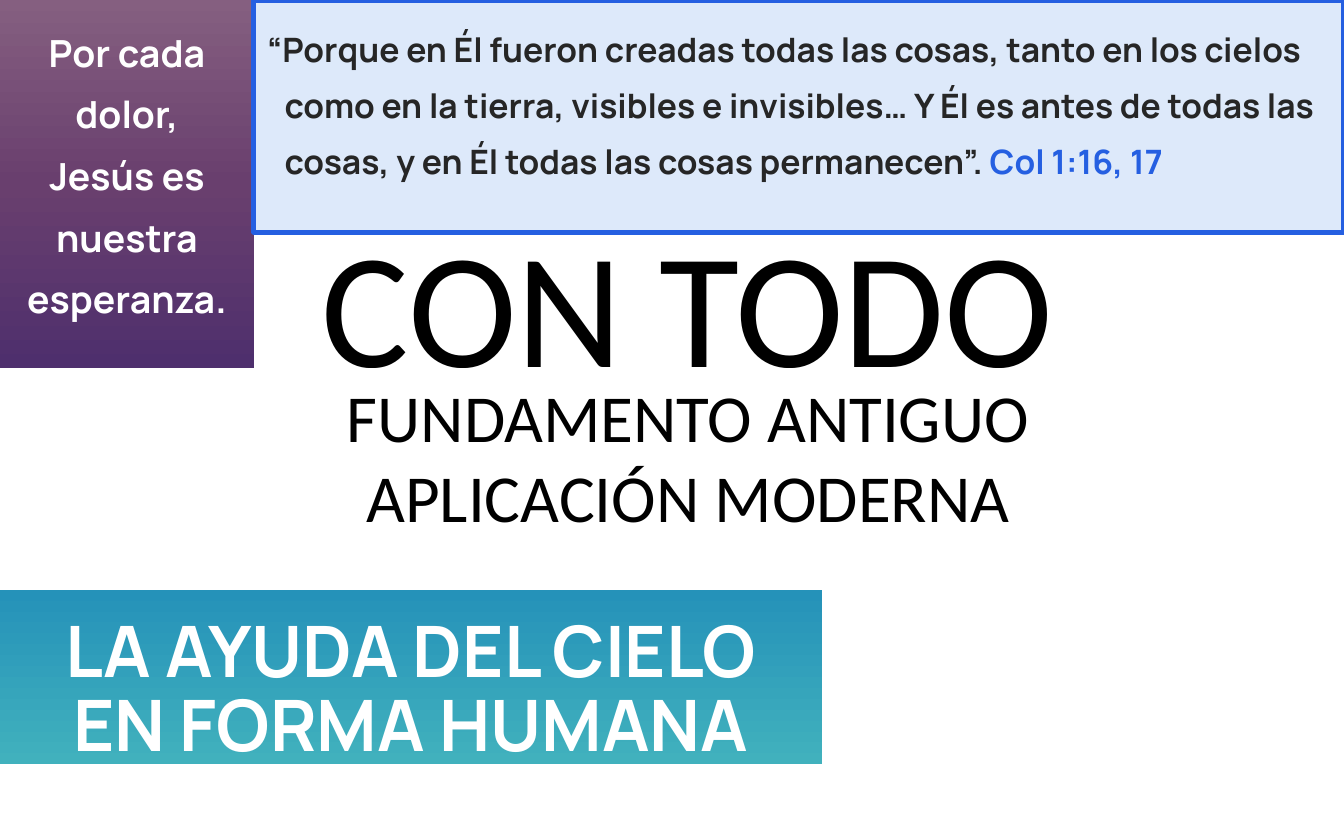
"""Builds a slide with a lesson title, a verse and two gradient panels."""
from dataclasses import dataclass
from typing import Optional

from lxml import etree
from pptx import Presentation
from pptx.dml.color import RGBColor
from pptx.enum.text import MSO_AUTO_SIZE, PP_ALIGN
from pptx.oxml.ns import qn
from pptx.util import Cm, Pt

CENTER, LEFT = PP_ALIGN.CENTER, PP_ALIGN.LEFT
FIT_SHAPE, FIT_NONE = MSO_AUTO_SIZE.SHAPE_TO_FIT_TEXT, MSO_AUTO_SIZE.NONE
SLIDE_WIDTH, SLIDE_HEIGHT = 25.4, 15.88
SIDE_WIDTH, SIDE_HEIGHT = 4.8, 6.96
WHITE, BLACK, BLUE = "FFFFFF", "000000", "255FE1"


@dataclass(frozen=True)
class Panel:
    """A filled text panel; lengths are centimetres, text sizes points."""
    left: float
    top: float
    width: float
    height: float
    lines: tuple[str, ...]
    size: float
    colors: tuple[str, ...] = (WHITE,)
    font: str = "Calibri"
    text_color: str = BLACK
    bold: bool = False
    leading: Optional[float] = None
    inset_top: float = 0.13
    inset_bottom: float = 0.13
    align: PP_ALIGN = CENTER
    grow: bool = False
    border: Optional[str] = None
    hanging: float = 0
    reference: str = ""


PANELS = (
    Panel(5.61, 3.71, 14.78, 4.01, ("CON TODO",), 88, grow=True),
    Panel(1.65, SIDE_HEIGHT, 22.71, 3.33,
          ("FUNDAMENTO ANTIGUO", "APLICACIÓN MODERNA"), 36, grow=True),
    Panel(0, 11.15, 15.54, 3.3, ("LA AYUDA DEL CIELO\vEN FORMA HUMANA",), 38,
          ("2592B9", "41B1BD"), "Manrope", WHITE, True, 40, 0.51, 0),
    Panel(0, 0, SIDE_WIDTH, SIDE_HEIGHT,
          ("Por cada dolor,", "Jesús es nuestra esperanza."), 20,
          ("855F80", "693F6E", "4E2F6D"), "Manrope", WHITE, True, 33, 0.25, 0),
    Panel(SIDE_WIDTH, 0, SLIDE_WIDTH - SIDE_WIDTH, 4.39,
          ("“Porque en Él fueron creadas todas las cosas, tanto en los cielos "
           "como en la tierra, visibles e invisibles… Y Él es antes de todas "
           "las cosas, y en Él todas las cosas permanecen”. ",), 18,
          ("DDE9FA",), "Manrope", "262626", True, 30, 0.25, 0,
          align=LEFT, border=BLUE, hanging=0.33, reference="Col 1:16, 17"),
)


def rgb(value: str) -> RGBColor:
    """Turn a hex string into a colour."""
    return RGBColor.from_string(value)


def fill_panel(shape, colors: tuple[str, ...]) -> None:
    """Fill with one colour, or with evenly spaced stops from top to bottom."""
    if len(colors) == 1:
        shape.fill.solid()
        shape.fill.fore_color.rgb = rgb(colors[0])
        return
    shape.fill.gradient()
    shape.fill.gradient_angle = 270
    stops = next(shape.element.iter(qn("a:gsLst")))
    for stop in list(stops):
        stops.remove(stop)
    for index, color in enumerate(colors):
        position = str(100000 * index // (len(colors) - 1))
        stop = etree.SubElement(stops, qn("a:gs"), pos=position)
        etree.SubElement(stop, qn("a:srgbClr"), val=color)


def format_paragraph(paragraph, panel: Panel) -> None:
    """Apply the panel's alignment, leading, indent and typeface."""
    paragraph.alignment = panel.align
    if panel.leading:
        paragraph.line_spacing = Pt(panel.leading)
    if panel.hanging:
        properties = paragraph._p.get_or_add_pPr()
        properties.set("marL", str(Cm(panel.hanging)))
        properties.set("indent", str(-Cm(panel.hanging)))
    for run in paragraph.runs:
        run.font.name = panel.font
        run.font.size = Pt(panel.size)
        run.font.bold = panel.bold
        run.font.color.rgb = rgb(panel.text_color)


def draw_panel(slide, panel: Panel) -> None:
    """Draw one panel with its text."""
    box = slide.shapes.add_textbox(Cm(panel.left), Cm(panel.top),
                                   Cm(panel.width), Cm(panel.height))
    fill_panel(box, panel.colors)
    if panel.border:
        box.line.color.rgb = rgb(panel.border)
        box.line.width = Pt(2.75)
    frame = box.text_frame
    frame.word_wrap = True
    frame.auto_size = FIT_SHAPE if panel.grow else FIT_NONE
    frame.margin_top = Cm(panel.inset_top)
    frame.margin_bottom = Cm(panel.inset_bottom)
    for index, line in enumerate(panel.lines):
        paragraph = frame.add_paragraph() if index else frame.paragraphs[0]
        paragraph.text = line
        if panel.reference:
            paragraph.add_run().text = panel.reference
        format_paragraph(paragraph, panel)
        if panel.reference:
            paragraph.runs[-1].font.color.rgb = rgb(BLUE)


def main() -> None:
    """Build and save the slide."""
    deck = Presentation()
    deck.slide_width, deck.slide_height = Cm(SLIDE_WIDTH), Cm(SLIDE_HEIGHT)
    slide = deck.slides.add_slide(deck.slide_layouts[6])
    for panel in PANELS:
        draw_panel(slide, panel)
    deck.save("out.pptx")


if __name__ == "__main__":
    main()
